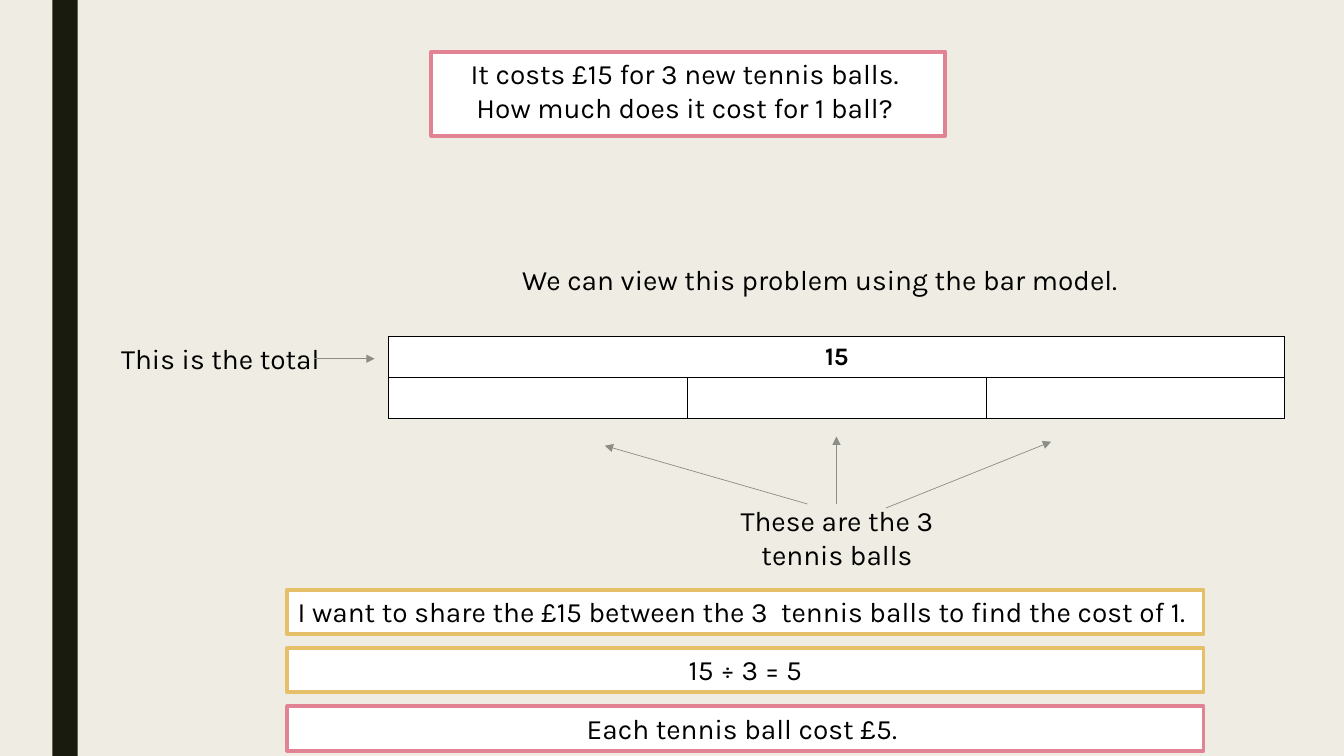
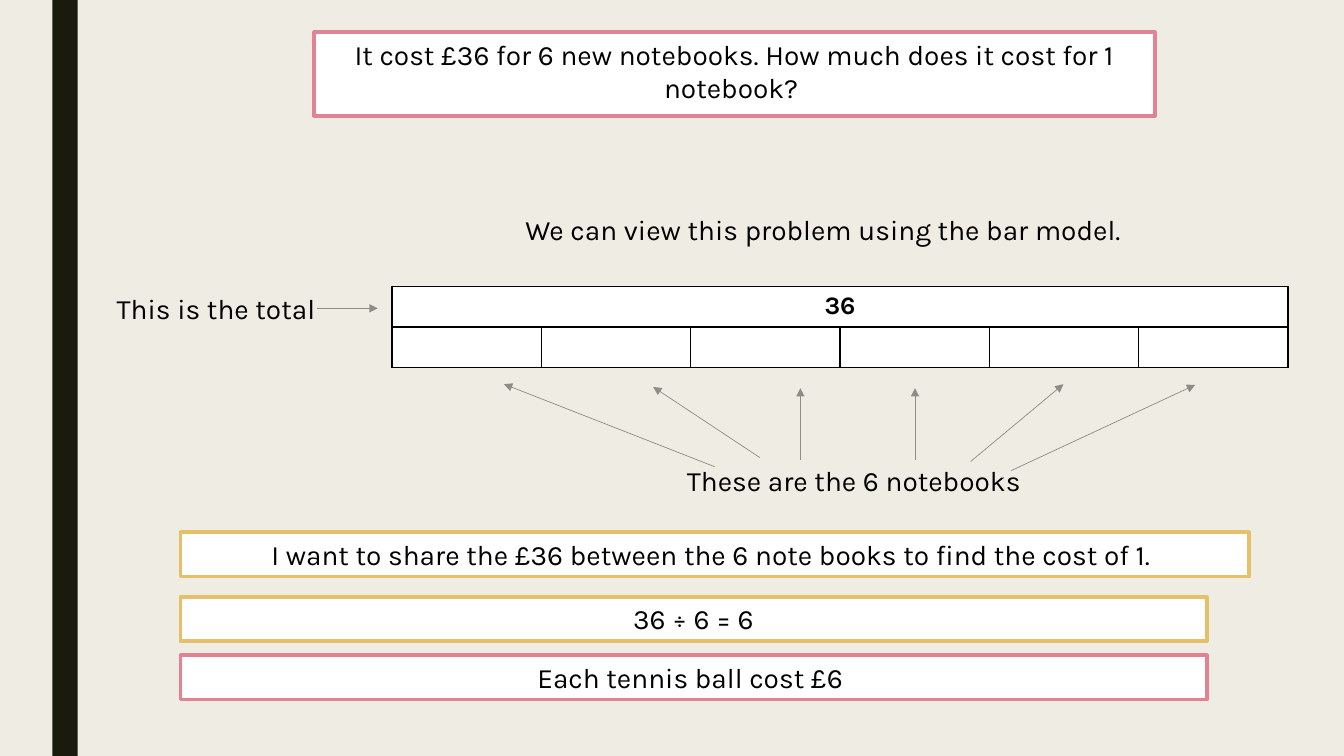
from lxml import etree
from pptx import Presentation
from pptx.dml.color import RGBColor
from pptx.enum.shapes import MSO_CONNECTOR, MSO_SHAPE
from pptx.enum.text import MSO_ANCHOR, MSO_AUTO_SIZE, PP_ALIGN
from pptx.oxml.ns import qn
from pptx.util import Cm, Pt

RECTANGLE = MSO_SHAPE.RECTANGLE
STRAIGHT = MSO_CONNECTOR.STRAIGHT
TOP, MIDDLE = MSO_ANCHOR.TOP, MSO_ANCHOR.MIDDLE
CENTER = PP_ALIGN.CENTER
GROW = MSO_AUTO_SIZE.SHAPE_TO_FIT_TEXT

COLORS = {
    "background": "EFEDE3",
    "band": "191B0E",
    "box": "FFFFFF",
    "text": "000000",
    "pink": "E28394",
    "yellow": "E6C069",
    "arrow": "8C8D86",
}
FONT = "Karla"
SLIDE_WIDTH, SLIDE_HEIGHT = 33.87, 19.05
LINE_HEIGHT, TWO_LINES = 1.12, 1.96
BAR_WIDTH, ROW_HEIGHT = 22.58, 1.03
TITLE_ONLY = 5


def rgb(name):
    return RGBColor.from_string(COLORS[name])


class Lesson:
    """Holds the shared style and the slide being built; lengths are in cm."""

    def __init__(self):
        self.deck = Presentation()
        self.deck.slide_width = Cm(SLIDE_WIDTH)
        self.deck.slide_height = Cm(SLIDE_HEIGHT)
        self.slide = None
        background = self.deck.slide_master.background.fill
        background.solid()
        background.fore_color.rgb = rgb("background")

    def new_slide(self):
        layout = self.deck.slide_layouts[TITLE_ONLY]
        first = self.slide is None
        self.slide = self.deck.slides.add_slide(layout)
        if first:
            self.move_band_to(layout)

    def move_band_to(self, layout):
        """Draw the side band and hand it to the layout, behind its placeholders."""
        band = self.slide.shapes.add_shape(
            RECTANGLE, Cm(1.32), 0, Cm(0.64), Cm(SLIDE_HEIGHT))
        band.shadow.inherit = False
        band.fill.solid()
        band.fill.fore_color.rgb = rgb("band")
        band.line.fill.background()
        band.element.xpath(".//p:cNvPr")[0].set("id", "100")
        layout.shapes.element.insert(2, band.element)

    def set_text(self, frame, text, size=20, bold=False):
        frame.text = text
        for paragraph in frame.paragraphs:
            paragraph.alignment = CENTER
            for run in paragraph.runs:
                run.font.name = FONT
                run.font.size = Pt(size)
                run.font.bold = bold
                run.font.color.rgb = rgb("text")

    def set_growing_text(self, shape, text):
        frame = shape.text_frame
        frame.word_wrap = True
        frame.auto_size = GROW
        frame.vertical_anchor = TOP
        self.set_text(frame, text)

    def outline(self, shape, color):
        shape.fill.solid()
        shape.fill.fore_color.rgb = rgb("box")
        shape.line.color.rgb = rgb(color)
        shape.line.width = Pt(2.75)

    def question(self, left, top, width, text):
        title = self.slide.shapes.title
        title.left, title.top = Cm(left), Cm(top)
        title.width, title.height = Cm(width), Cm(TWO_LINES)
        self.outline(title, "pink")
        self.set_growing_text(title, text)

    def step(self, left, top, width, text, color):
        box = self.slide.shapes.add_shape(
            RECTANGLE, Cm(left), Cm(top), Cm(width), Cm(LINE_HEIGHT))
        box.shadow.inherit = False
        self.outline(box, color)
        self.set_growing_text(box, text)

    def label(self, left, top, width, text, height=LINE_HEIGHT):
        box = self.slide.shapes.add_textbox(
            Cm(left), Cm(top), Cm(width), Cm(height))
        self.set_growing_text(box, text)

    def arrow(self, x1, y1, x2, y2):
        connector = self.slide.shapes.add_connector(
            STRAIGHT, Cm(x1), Cm(y1), Cm(x2), Cm(y2))
        connector.line.color.rgb = rgb("arrow")
        connector.line.width = Pt(0.5)
        properties = connector.element.spPr
        etree.SubElement(properties.find(qn("a:ln")), qn("a:tailEnd"), type="triangle")
        etree.SubElement(properties, qn("a:effectLst"))

    def style_cell(self, cell):
        """Give a cell thin borders and a plain fill; borders must come first."""
        properties = cell._tc.get_or_add_tcPr()
        for side in ("a:lnL", "a:lnR", "a:lnT", "a:lnB"):
            border = etree.SubElement(properties, qn(side), w=str(Pt(1)))
            fill = etree.SubElement(border, qn("a:solidFill"))
            etree.SubElement(fill, qn("a:srgbClr"), val=COLORS["text"])
        cell.fill.solid()
        cell.fill.fore_color.rgb = rgb("box")

    def bar(self, left, top, total, parts):
        table = self.slide.shapes.add_table(
            2, parts, Cm(left), Cm(top), Cm(BAR_WIDTH), Cm(2 * ROW_HEIGHT)).table
        table.first_row = table.horz_banding = False
        for column in table.columns:
            column.width = Cm(BAR_WIDTH / parts)
        for cell in table.iter_cells():
            self.style_cell(cell)
        total_cell = table.cell(0, 0)
        total_cell.merge(table.cell(0, parts - 1))
        total_cell.vertical_anchor = MIDDLE
        self.set_text(total_cell.text_frame, total, size=18, bold=True)

    def bar_model(self, left, top, total, parts, total_label_left):
        """Draw the bar with its introduction above and the total's label beside."""
        self.label(left + 2.01, top - 1.99, 17.88,
                   "We can view this problem using the bar model. ")
        self.bar(left, top, total, parts)
        self.label(total_label_left, top, 6.63, "This is the total")
        self.arrow(left - 1.88, top + 0.56, left - 0.36, top + 0.56)


def tennis_slide(lesson):
    lesson.new_slide()
    lesson.question(10.87, 1.3, 12.95,
                    "It costs £15 for 3 new tennis balls. \n"
                    "How much does it cost for 1 ball? ")
    lesson.bar_model(9.8, 8.48, "15", 3, total_label_left=2.24)
    lesson.label(17.78, 12.57, 6.63, "These are the 3 tennis balls", TWO_LINES)
    for ends in ((20.35, 12.7, 15.24, 11.23),
                 (21.08, 12.7, 21.08, 11),
                 (22.33, 12.8, 26.49, 11.13)):
        lesson.arrow(*ends)
    steps = (
        ("I want to share the £15 between the 3  tennis balls to find the cost of 1. ",
         "yellow"),
        ("15 ÷ 3 = 5", "yellow"),
        ("Each tennis ball cost £5. ", "pink"),
    )
    for row, (text, color) in enumerate(steps):
        lesson.step(7.24, 14.86 + 1.47 * row, 23.09, text, color)


def notebook_slide(lesson):
    lesson.new_slide()
    lesson.question(7.92, 0.81, 21.18,
                    "It cost £36 for 6 new notebooks. "
                    "How much does it cost for 1 notebook? ")
    lesson.bar_model(9.88, 7.21, "36", 6, total_label_left=2.13)
    lesson.label(13.94, 11.56, 15.16, "These are the 6 notebooks")
    for ends in ((18.01, 11.76, 12.7, 9.68),
                 (19.15, 11.53, 16.46, 9.75),
                 (20.17, 11.58, 20.17, 9.78),
                 (23.06, 11.58, 23.06, 9.78),
                 (24.46, 11.63, 26.8, 9.68),
                 (25.48, 11.86, 30.12, 9.7)):
        lesson.arrow(*ends)
    steps = (
        (13.41, 26.92,
         "I want to share the £36 between the 6 note books to find the cost of 1. ",
         "yellow"),
        (15.04, 25.86, "36 ÷ 6 = 6", "yellow"),
        (16.51, 25.86, "Each tennis ball cost £6 ", "pink"),
    )
    for top, width, text, color in steps:
        lesson.step(4.55, top, width, text, color)


def main():
    lesson = Lesson()
    tennis_slide(lesson)
    notebook_slide(lesson)
    lesson.deck.save("out.pptx")


if __name__ == "__main__":
    main()
